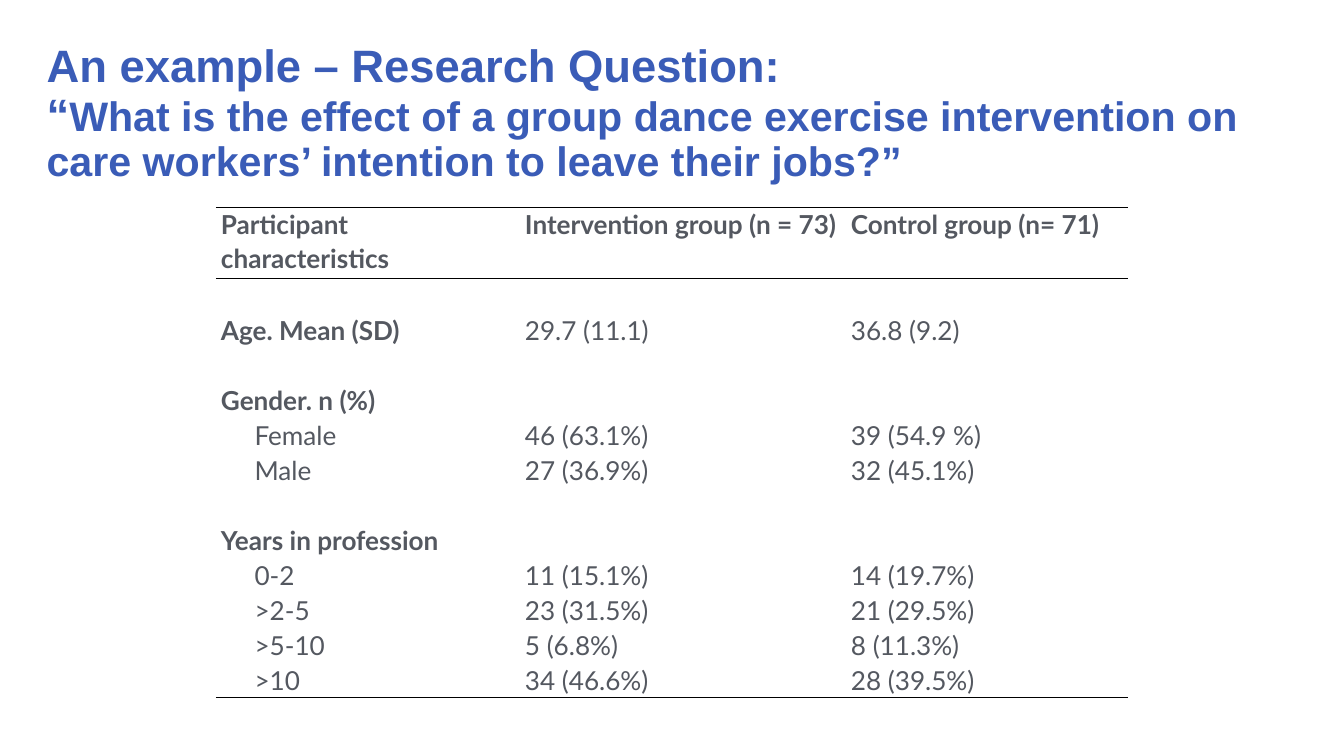
from lxml import etree
from pptx import Presentation
from pptx import util as u
from pptx.dml.color import RGBColor
from pptx.enum import text
from pptx.oxml import ns

PX = 914400 / 67.2
COLORS = {"title": "3A5CB7", "body": "545860", "rule": "000000"}
TITLE_PARTS = [
    (["An example – Research Question:", "“"], 48.6),
    (["What is the effect of a group dance exercise intervention on "
      "care workers’ intention to leave their jobs?”"], 44.1),
]
HEADER, SECTION, ITEM = "header", "section", "item"
ROWS = [
    (HEADER, "Participant characteristics", "Intervention group (n = 73)", "Control group (n= 71)"),
    (SECTION, "", "", ""),
    (SECTION, "Age. Mean (SD)", "29.7 (11.1)", "36.8 (9.2)"),
    (SECTION, "", "", ""),
    (SECTION, "Gender. n (%)", "", ""),
    (ITEM, "Female", "46 (63.1%)", "39 (54.9 %)"),
    (ITEM, "Male", "27 (36.9%)", "32 (45.1%)"),
    (SECTION, "", "", ""),
    (SECTION, "Years in profession", "", ""),
    (ITEM, "0-2", "11 (15.1%)", "14 (19.7%)"),
    (ITEM, ">2-5", "23 (31.5%)", "21 (29.5%)"),
    (ITEM, ">5-10", "5 (6.8%)", "8 (11.3%)"),
    (ITEM, ">10", "34 (46.6%)", "28 (39.5%)"),
]
COLUMN_WIDTHS = [304, 326, 282]
HEADER_HEIGHT, ROW_HEIGHT = 71, 35


def px(length):
    return u.Emu(round(length * PX))


def assign(target, **values):
    for name, value in values.items():
        setattr(target, name, value)


def add_span(para, words, color, **font):
    span = para.add_run()
    span.text = words
    assign(span.font, **font)
    span.font.color.rgb = RGBColor.from_string(COLORS[color])


def add_title(page):
    box = page.shapes.add_textbox(px(40), px(9), px(1264), px(211))
    frame = box.text_frame
    assign(frame, word_wrap=True, vertical_anchor=text.MSO_ANCHOR.MIDDLE)
    para = frame.paragraphs[0]
    para.line_spacing = 0.9
    for lines, size in TITLE_PARTS:
        for index, line in enumerate(lines):
            if index:
                para.add_line_break()
                # The break carries the height of the line it ends.
                mark = para._p.findall(ns.qn("a:br"))[-1]
                etree.SubElement(mark, ns.qn("a:rPr"), sz=str(round(size * 100)))
            add_span(para, line, "title", name="Arial", size=u.Pt(size), bold=True)


def set_borders(cell, ruled):
    """Draw a thin rule on the sides named in ruled and clear the others."""
    properties = cell._tc.get_or_add_tcPr()
    for side in "LRTB":
        line = etree.SubElement(properties, ns.qn(f"a:ln{side}"), w=str(u.Pt(1)))
        if side in ruled:
            fill = etree.SubElement(line, ns.qn("a:solidFill"))
            etree.SubElement(fill, ns.qn("a:srgbClr"), val=COLORS["rule"])
        else:
            etree.SubElement(line, ns.qn("a:noFill"))


def fill_cell(cell, words, bold, indented, ruled):
    set_borders(cell, ruled)
    cell.fill.background()
    assign(cell, margin_left=px(5), margin_right=px(5), margin_top=0, margin_bottom=0)
    if not words:
        return
    para = cell.text_frame.paragraphs[0]
    assign(para, line_spacing=1.07, space_after=u.Pt(8))
    if indented:
        para._p.get_or_add_pPr().set("marL", str(u.Inches(0.5)))
    add_span(para, words, "body", name="Lato", size=u.Pt(28), bold=bold)


def add_characteristics_table(page):
    height = HEADER_HEIGHT + ROW_HEIGHT * (len(ROWS) - 1)
    table = page.shapes.add_table(len(ROWS), len(COLUMN_WIDTHS), px(216), px(207),
                                  px(sum(COLUMN_WIDTHS)), px(height)).table
    assign(table, first_row=False, horz_banding=False)
    for column, width in zip(table.columns, COLUMN_WIDTHS):
        column.width = px(width)
    rules = {0: "TB", 1: "T", len(ROWS) - 1: "B"}
    for row, (kind, *entries) in enumerate(ROWS):
        table.rows[row].height = px(HEADER_HEIGHT if kind == HEADER else ROW_HEIGHT)
        for column, words in enumerate(entries):
            is_label = column == 0
            bold = kind == HEADER or (kind == SECTION and is_label)
            fill_cell(table.cell(row, column), words, bold,
                      kind == ITEM and is_label, rules.get(row, ""))


def main():
    deck = Presentation()
    assign(deck, slide_width=px(1344), slide_height=px(756))
    page = deck.slides.add_slide(deck.slide_layouts[6])
    add_title(page)
    add_characteristics_table(page)
    deck.save("out.pptx")


if __name__ == "__main__":
    main()
